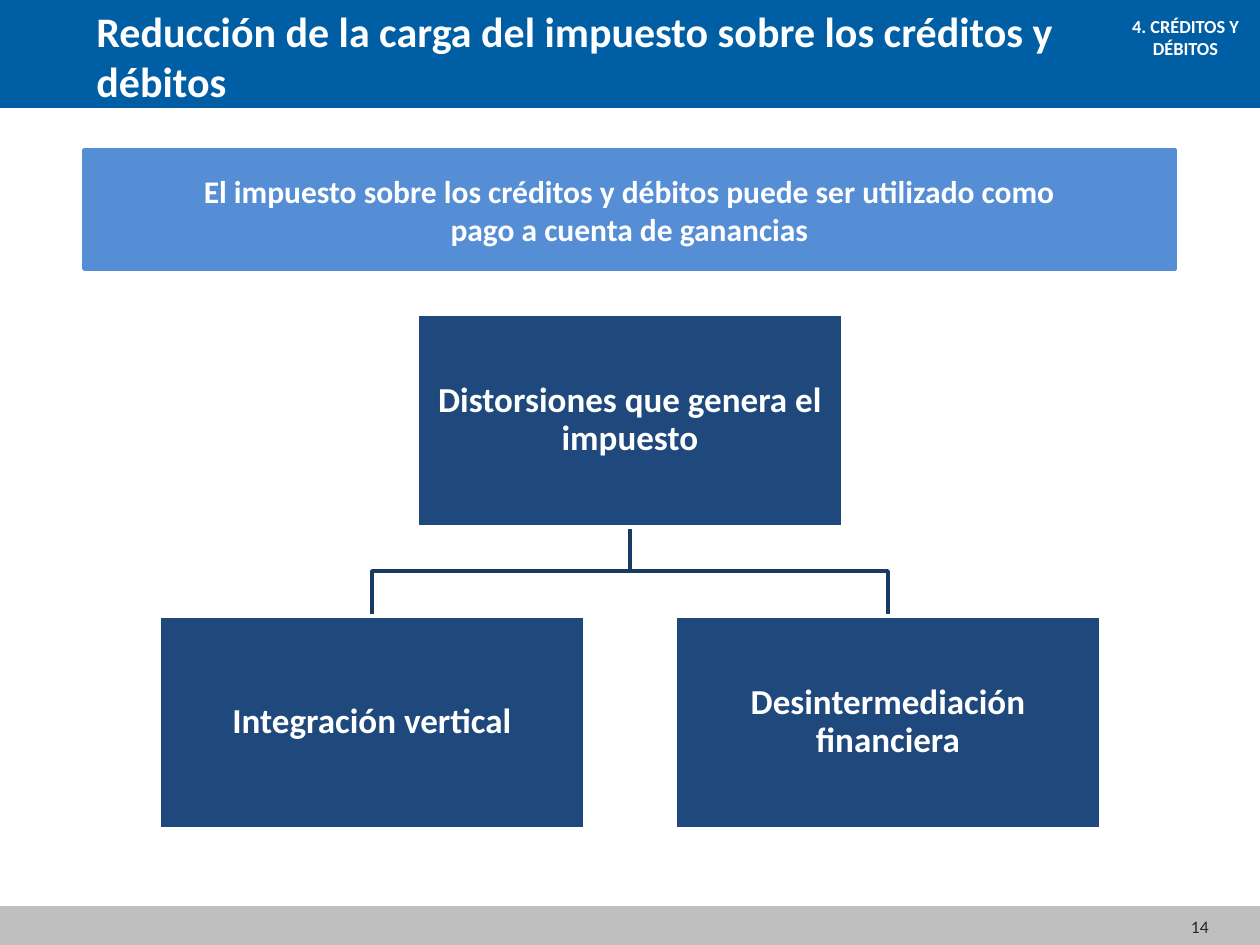
from dataclasses import dataclass

from pptx import Presentation
from pptx import util as u
from pptx.dml.color import RGBColor
from pptx.enum import shapes, text

EMU_PER_PX = 914400 / 126
SLIDE_WIDTH, SLIDE_HEIGHT = 1260, 945


@dataclass(frozen=True)
class Theme:
    font: str = "Calibri"
    white: str = "FFFFFF"
    header: str = "005EA4"
    footer: str = "BFBFBF"
    banner: str = "558ED5"
    box: str = "1F497D"
    branch: str = "193A64"
    dark: str = "262626"
    title_size: float = 24
    box_size: float = 20
    banner_size: float = 18
    tag_size: float = 10.5
    number_size: float = 10
    line_width: float = 2


@dataclass(frozen=True)
class Area:
    left: int
    top: int
    width: int
    height: int

    @property
    def center(self) -> int:
        return self.left + self.width // 2

    @property
    def bottom(self) -> int:
        return self.top + self.height

    def emu(self) -> list[u.Emu]:
        return [px(n) for n in (self.left, self.top, self.width, self.height)]


@dataclass(frozen=True)
class Words:
    lines: tuple[str, ...]
    size: float
    color: str = "FFFFFF"
    bold: bool = True
    align: text.PP_ALIGN = text.PP_ALIGN.CENTER
    anchor: text.MSO_ANCHOR = text.MSO_ANCHOR.MIDDLE
    spacing: float = 1.0


THEME = Theme()


def px(length: int) -> u.Emu:
    return u.Emu(round(length * EMU_PER_PX))


def write(shape, words: Words, inset: int | None = None) -> None:
    frame = shape.text_frame
    frame.word_wrap = True
    frame.vertical_anchor = words.anchor
    if inset is not None:
        frame.margin_left = frame.margin_right = px(inset)
        frame.margin_top = frame.margin_bottom = px(inset)
    frame.text = "\n".join(words.lines)
    for paragraph in frame.paragraphs:
        paragraph.alignment = words.align
        paragraph.line_spacing = words.spacing
        font = paragraph.font
        font.name = THEME.font
        font.size = u.Pt(words.size)
        font.bold = words.bold
        font.color.rgb = RGBColor.from_string(words.color)


def set_line(shape, color: str | None) -> None:
    shape.shadow.inherit = False
    if color is None:
        shape.line.fill.background()
        return
    shape.line.color.rgb = RGBColor.from_string(color)
    shape.line.width = u.Pt(THEME.line_width)


def add_rectangle(slide, area: Area, fill: str, line: str | None = None):
    shape = slide.shapes.add_shape(shapes.MSO_SHAPE.RECTANGLE, *area.emu())
    shape.fill.solid()
    shape.fill.fore_color.rgb = RGBColor.from_string(fill)
    set_line(shape, line)
    return shape


def add_text(slide, area: Area, words: Words) -> None:
    write(slide.shapes.add_textbox(*area.emu()), words)


def add_branch(slide, parent: Area, child: Area) -> None:
    middle = (parent.bottom + child.top) // 2
    builder = slide.shapes.build_freeform(parent.center, parent.bottom, EMU_PER_PX)
    builder.add_line_segments(
        [(parent.center, middle), (child.center, middle), (child.center, child.top)],
        close=False,
    )
    shape = builder.convert_to_shape()
    shape.fill.background()
    set_line(shape, THEME.branch)


def add_box(slide, area: Area, label: str) -> None:
    shape = add_rectangle(slide, area, THEME.box, THEME.white)
    write(shape, Words((label,), THEME.box_size, spacing=0.9), inset=2)


def main() -> None:
    presentation = Presentation()
    presentation.slide_width = px(SLIDE_WIDTH)
    presentation.slide_height = px(SLIDE_HEIGHT)
    slide = presentation.slides.add_slide(presentation.slide_layouts[6])

    # Header and footer bands, page number and title
    add_rectangle(slide, Area(0, 0, SLIDE_WIDTH, 108), THEME.header)
    add_rectangle(slide, Area(0, 908, SLIDE_WIDTH, 37), THEME.footer, THEME.footer)
    add_text(slide, Area(927, 902, 294, 50),
             Words(("14",), THEME.number_size, THEME.dark, False, text.PP_ALIGN.RIGHT))
    title = "Reducción de la carga del impuesto sobre los créditos y débitos"
    add_text(slide, Area(84, -1, 1091, 114),
             Words((title,), THEME.title_size, align=text.PP_ALIGN.LEFT,
                   anchor=text.MSO_ANCHOR.TOP))

    # Tree: one parent centred above a row of children
    width, height, gap = 426, 213, 90
    labels = ("Integración vertical", "Desintermediación financiera")
    row_width = len(labels) * (width + gap) - gap
    row_left = (SLIDE_WIDTH - row_width) // 2
    parent = Area((SLIDE_WIDTH - width) // 2, 314, width, height)
    children = [Area(row_left + i * (width + gap), 616, width, height)
                for i in range(len(labels))]
    for child in children:
        add_branch(slide, parent, child)
    add_box(slide, parent, "Distorsiones que genera el impuesto")
    for child, label in zip(children, labels):
        add_box(slide, child, label)

    # Key message banner
    banner = add_rectangle(slide, Area(84, 150, 1091, 119), THEME.banner, THEME.banner)
    write(banner, Words(
        ("El impuesto sobre los créditos y débitos puede ser utilizado como",
         "pago a cuenta de ganancias"), THEME.banner_size))

    # Section tag
    add_text(slide, Area(1106, 9, 159, 57),
             Words(("4. CRÉDITOS Y DÉBITOS",), THEME.tag_size,
                   anchor=text.MSO_ANCHOR.TOP))

    presentation.save("out.pptx")


if __name__ == "__main__":
    main()
